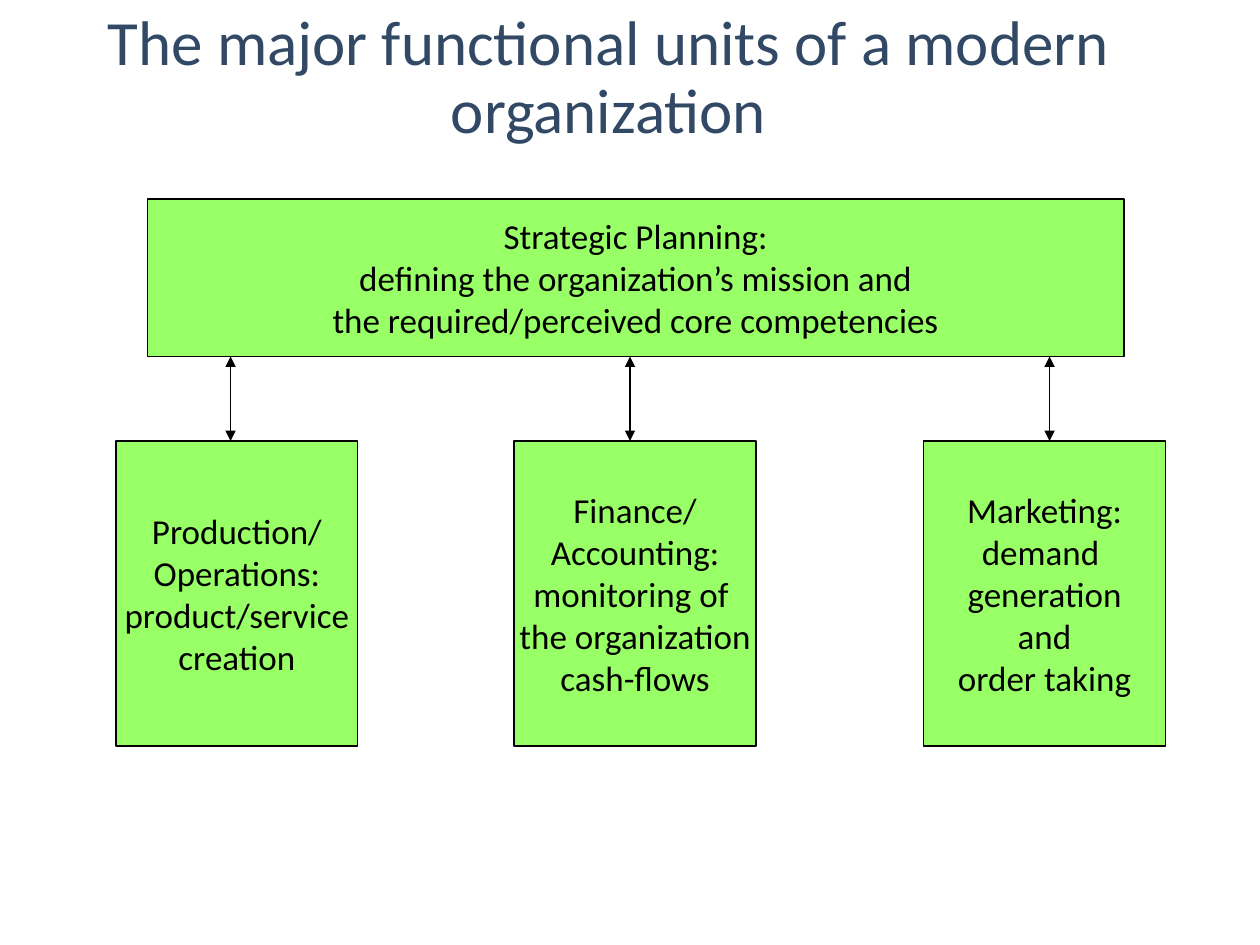
from lxml import etree
from pptx import Presentation
from pptx.dml.color import RGBColor
from pptx.enum import shapes, text
from pptx.oxml import ns
from pptx.util import Inches, Pt

# Content
TITLE = "The major functional units of a modern organization"
PLAN = [
    "Strategic Planning:",
    "defining the organization’s mission and",
    " the required/perceived core competencies ",
]
# Each unit: box left, arrow x, lines
UNITS = [
    (0.92, 1.83, ["Production/", "Operations:", "product/service", "creation"]),
    (4.08, 5, ["Finance/", "Accounting:", "monitoring of ",
               "the organization", "cash-flows"]),
    (7.33, 8.33, ["Marketing:", "demand ", "generation", "and", "order taking"]),
]

# Layout in inches
PLAN_BOX = (1.17, 1.58, 7.75, 1.25)
PLAN_END = PLAN_BOX[1] + PLAN_BOX[3]
UNIT_TOP, UNIT_W, UNIT_H = 3.5, 1.92, 2.42

THEME = {
    "font": "Calibri",
    "head": RGBColor(0x32, 0x49, 0x66),
    "ink": RGBColor(0, 0, 0),
    "fill": RGBColor(0x99, 0xFF, 0x66),
    "head_pt": Pt(36),
    "body_pt": Pt(20),
    "line_pt": Pt(0.75),
}


def write(shape, words, size, color, wrap):
    frame = shape.text_frame
    frame.text = words
    frame.word_wrap = wrap
    frame.vertical_anchor = text.MSO_ANCHOR.MIDDLE
    for para in frame.paragraphs:
        para.alignment = text.PP_ALIGN.CENTER
        for run in para.runs:
            run.font.name = THEME["font"]
            run.font.size = size
            run.font.color.rgb = color
    return frame


def stroke(line):
    line.color.rgb = THEME["ink"]
    line.width = THEME["line_pt"]


def add_box(slide, place, lines):
    box = slide.shapes.add_shape(shapes.MSO_SHAPE.RECTANGLE, *map(Inches, place))
    box.shadow.inherit = False
    box.fill.solid()
    box.fill.fore_color.rgb = THEME["fill"]
    stroke(box.line)
    write(box, "\n".join(lines), THEME["body_pt"], THEME["ink"], False)


def add_arrow(slide, x, top, end):
    arrow = slide.shapes.add_connector(
        shapes.MSO_CONNECTOR.STRAIGHT, *map(Inches, (x, top, x, end)))
    stroke(arrow.line)
    props = arrow.element.spPr
    line = props.find(ns.qn("a:ln"))
    for tip in ("a:headEnd", "a:tailEnd"):
        etree.SubElement(line, ns.qn(tip), type="triangle")
    etree.SubElement(props, ns.qn("a:effectLst"))


def main():
    deck = Presentation()
    deck.slide_width, deck.slide_height = Inches(10), Inches(7.5)
    slide = deck.slides.add_slide(deck.slide_layouts[6])

    # Title
    title = slide.shapes.add_textbox(*map(Inches, (0.58, 0, 8.5, 1.25)))
    frame = write(title, TITLE, THEME["head_pt"], THEME["head"], True)
    frame.paragraphs[0].line_spacing = 0.9

    # Planning box above, units linked below it
    add_box(slide, PLAN_BOX, PLAN)
    for left, x, lines in UNITS:
        add_box(slide, (left, UNIT_TOP, UNIT_W, UNIT_H), lines)
        add_arrow(slide, x, PLAN_END, UNIT_TOP)

    deck.save("out.pptx")


if __name__ == "__main__":
    main()
